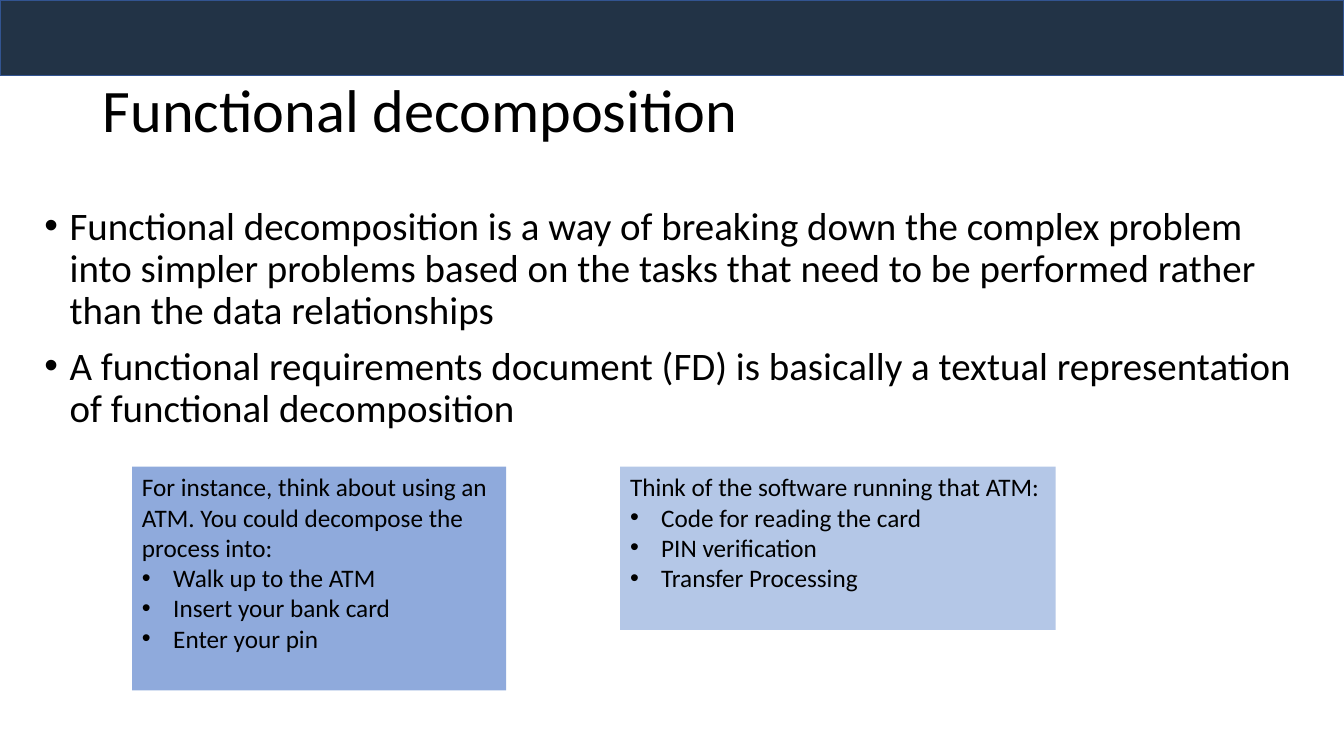
from dataclasses import dataclass

import lxml.etree
import pptx
import pptx.dml.color
import pptx.enum.shapes
import pptx.enum.text
import pptx.oxml.ns
import pptx.util
from pptx.util import Inches


@dataclass(frozen=True)
class Theme:
    font: str = "Calibri"
    ink: str = "000000"
    banner: str = "223346"
    banner_line: str = "325491"
    user_card: str = "8FAADC"
    software_card: str = "B4C7E7"
    title_size: float = 43.1
    body_size: float = 27.8
    card_size: float = 18


@dataclass(frozen=True)
class Box:
    left: float
    top: float
    width: float
    height: float

    def lengths(self) -> tuple:
        return tuple(Inches(v) for v in (self.left, self.top, self.width, self.height))


@dataclass(frozen=True)
class Card:
    box: Box
    fill: str
    intro: str
    steps: tuple[str, ...]


THEME = Theme()
BANNER = Box(0, 0, 13.33, 0.75)
TITLE = Box(0.92, 0.4, 11.5, 1.45)
BODY = Box(0.34, 2, 12.68, 2.47)
DEFINITIONS = (
    "Functional decomposition is a way of breaking down the complex problem into simpler "
    "problems based on the tasks that need to be performed rather than the data relationships",
    "A functional requirements document (FD) is basically a textual representation of "
    "functional decomposition",
)
CARDS = (
    Card(
        Box(1.31, 4.63, 3.71, 2.22),
        THEME.user_card,
        "For instance, think about using an ATM. You could decompose the process into:",
        ("Walk up to the ATM", "Insert your bank card", "Enter your pin"),
    ),
    Card(
        Box(6.15, 4.63, 4.32, 1.62),
        THEME.software_card,
        "Think of the software running that ATM:",
        ("Code for reading the card", "PIN verification", "Transfer Processing"),
    ),
)


def rgb(value: str) -> pptx.dml.color.RGBColor:
    return pptx.dml.color.RGBColor.from_string(value)


def add_bullet(paragraph, indent: float) -> None:
    properties = paragraph._p.get_or_add_pPr()
    properties.set("marL", str(Inches(indent)))
    properties.set("indent", str(-Inches(indent)))
    for tag, attribute, value in (("a:buFont", "typeface", "Arial"), ("a:buChar", "char", "•")):
        bullet = lxml.etree.SubElement(properties, pptx.oxml.ns.qn(tag))
        bullet.set(attribute, value)


def write(frame, text: str, *, size: float, indent: float = 0,
          line_spacing: float = 1.0, space_before: float = 0) -> None:
    first = not frame.text
    paragraph = frame.paragraphs[0] if first else frame.add_paragraph()
    if indent:
        add_bullet(paragraph, indent)
    paragraph.alignment = pptx.enum.text.PP_ALIGN.LEFT
    paragraph.line_spacing = line_spacing
    paragraph.space_before = pptx.util.Pt(0 if first else space_before)
    run = paragraph.add_run()
    run.text = text
    run.font.name = THEME.font
    run.font.size = pptx.util.Pt(size)
    run.font.color.rgb = rgb(THEME.ink)


def prepare(frame, anchor: pptx.enum.text.MSO_ANCHOR) -> None:
    frame.word_wrap = True
    frame.auto_size = pptx.enum.text.MSO_AUTO_SIZE.NONE
    frame.vertical_anchor = anchor


def place(placeholder, box: Box) -> None:
    placeholder.left, placeholder.top, placeholder.width, placeholder.height = box.lengths()


def add_panel(slide, box: Box, fill: str, line: str | None = None):
    panel = slide.shapes.add_shape(pptx.enum.shapes.MSO_SHAPE.RECTANGLE, *box.lengths())
    panel.shadow.inherit = False
    panel.fill.solid()
    panel.fill.fore_color.rgb = rgb(fill)
    if line:
        panel.line.color.rgb = rgb(line)
        panel.line.width = pptx.util.Pt(1)
    else:
        panel.line.fill.background()
    return panel


def add_card(slide, card: Card) -> None:
    frame = add_panel(slide, card.box, card.fill).text_frame
    prepare(frame, pptx.enum.text.MSO_ANCHOR.TOP)
    write(frame, card.intro, size=THEME.card_size)
    for step in card.steps:
        write(frame, step, size=THEME.card_size, indent=0.31)


def main() -> None:
    deck = pptx.Presentation()
    deck.slide_width, deck.slide_height = Inches(13.33), Inches(7.5)
    slide = deck.slides.add_slide(deck.slide_layouts[1])

    banner = add_panel(slide, BANNER, THEME.banner, THEME.banner_line)
    slide.shapes._spTree.insert(2, banner._element)

    title = slide.shapes.title
    place(title, TITLE)
    prepare(title.text_frame, pptx.enum.text.MSO_ANCHOR.MIDDLE)
    write(title.text_frame, "Functional decomposition", size=THEME.title_size, line_spacing=0.9)

    body = slide.placeholders[1]
    place(body, BODY)
    prepare(body.text_frame, pptx.enum.text.MSO_ANCHOR.TOP)
    for definition in DEFINITIONS:
        write(body.text_frame, definition, size=THEME.body_size, indent=0.25,
              line_spacing=0.9, space_before=10.1)

    for card in CARDS:
        add_card(slide, card)

    deck.save("out.pptx")


if __name__ == "__main__":
    main()
